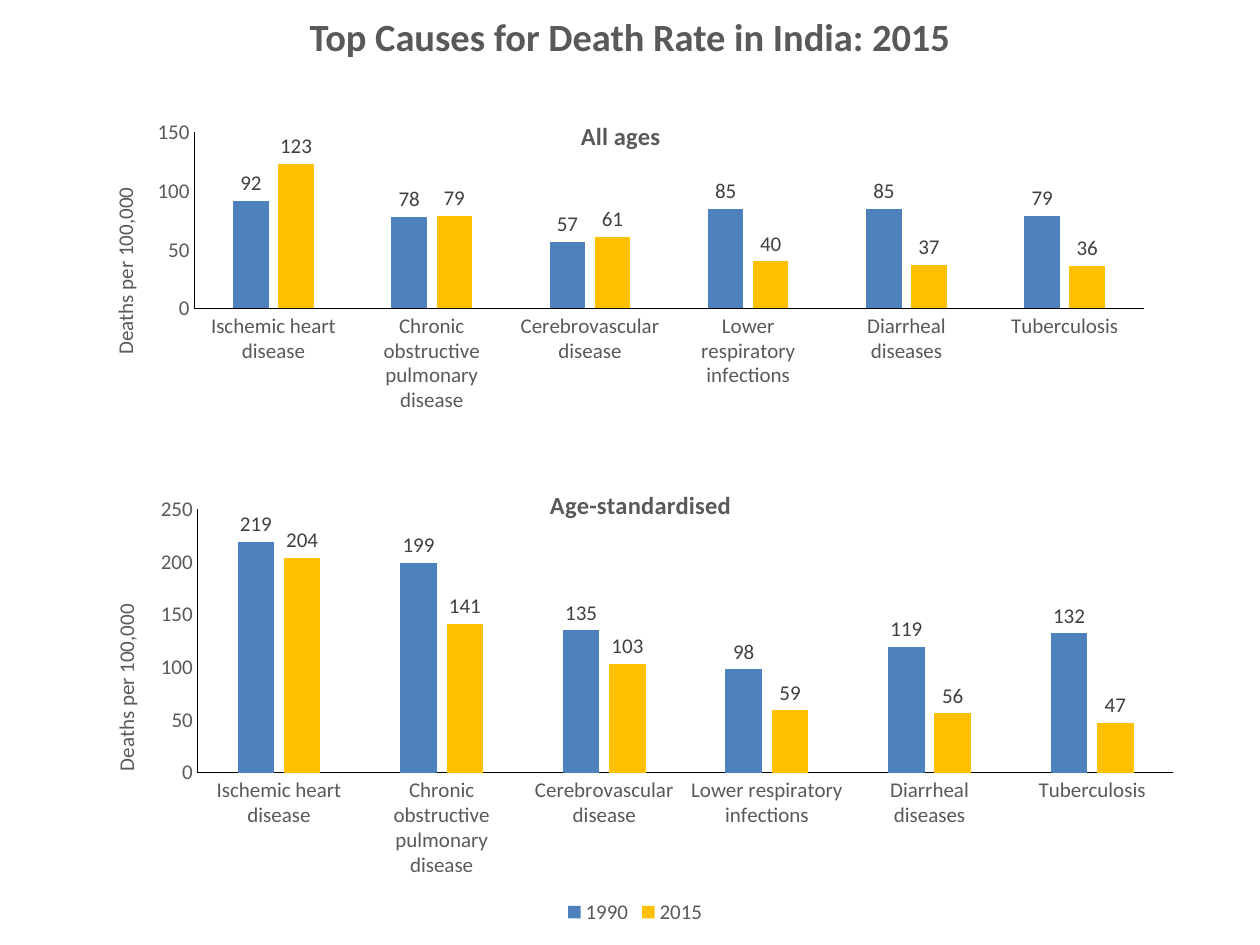
from lxml import etree
from pptx import Presentation
from pptx.chart.data import CategoryChartData
from pptx.dml.color import RGBColor
from pptx.enum.chart import XL_CHART_TYPE, XL_LABEL_POSITION, XL_LEGEND_POSITION, XL_TICK_MARK
from pptx.enum.text import PP_ALIGN
from pptx.oxml.ns import qn
from pptx.util import Cm, Pt

CLUSTERED = XL_CHART_TYPE.COLUMN_CLUSTERED
OUTSIDE_END = XL_LABEL_POSITION.OUTSIDE_END
LEGEND_BOTTOM = XL_LEGEND_POSITION.BOTTOM
NO_TICK = XL_TICK_MARK.NONE
CENTER = PP_ALIGN.CENTER

FONT = "Calibri"
GREY, DARK_GREY, BLACK = "595959", "404040", "000000"
BLUE, GOLD = "4F81BD", "FFC000"
CAUSES = [
    "Ischemic heart disease",
    "Chronic obstructive pulmonary disease",
    "Cerebrovascular disease",
    "Lower respiratory infections",
    "Diarrheal diseases",
    "Tuberculosis",
]


def color(value):
    """Turn a hex string into a colour."""
    return RGBColor.from_string(value)


def style_font(font, size, fill, bold=False):
    """Set the typeface, size, colour and weight of a font."""
    font.name = FONT
    font.size = Pt(size)
    font.bold = bold
    font.color.rgb = color(fill)


def add_heading(slide, text):
    """Add the centred slide heading."""
    heading = slide.shapes.add_textbox(Cm(0), Cm(0.13), Cm(25.4), Cm(1.19))
    heading.text_frame.word_wrap = True
    paragraph = heading.text_frame.paragraphs[0]
    paragraph.alignment = CENTER
    run = paragraph.add_run()
    run.text = text
    style_font(run.font, 22, GREY, True)


def place(parent, index, **fractions):
    """Give a chart part a manual layout in fractions of the chart."""
    for previous in parent.findall(qn("c:layout")):
        parent.remove(previous)
    layout = etree.Element(qn("c:layout"))
    manual = etree.SubElement(layout, qn("c:manualLayout"))
    if "w" in fractions:
        etree.SubElement(manual, qn("c:layoutTarget"), val="inner")
    for mode in ("xMode", "yMode"):
        etree.SubElement(manual, qn(f"c:{mode}"), val="edge")
    for name, fraction in fractions.items():
        etree.SubElement(manual, qn(f"c:{name}"), val=str(fraction))
    parent.insert(index, layout)


def write_title(title, text, size, bold, x, y):
    """Write a chart or axis title and place it."""
    run = title.text_frame.paragraphs[0].add_run()
    run.text = text
    style_font(run.font, size, GREY, bold)
    place(title.element, 1, x=x, y=y)


def style_axis(axis):
    """Give an axis a thin black line, grey labels and no ticks or grid."""
    axis.has_major_gridlines = False
    axis.major_tick_mark = NO_TICK
    axis.minor_tick_mark = NO_TICK
    axis.format.line.color.rgb = color(BLACK)
    axis.format.line.width = Pt(0.75)
    style_font(axis.tick_labels.font, 12, GREY)


def style_series(series, fill):
    """Colour a series and label its columns."""
    series.format.fill.solid()
    series.format.fill.fore_color.rgb = color(fill)
    labels = series.data_labels
    labels.show_value = True
    labels.number_format = "0"
    labels.number_format_is_linked = False
    labels.position = OUTSIDE_END
    style_font(labels.font, 12, DARK_GREY)


def add_death_chart(slide, box, title, title_at, series_values, maximum, plot_at):
    """Add a column chart of death rates by cause and return it."""
    data = CategoryChartData(number_format="0")
    data.categories = CAUSES
    for name, values in series_values.items():
        data.add_series(name, values)
    lengths = [Cm(length) for length in box]
    chart = slide.shapes.add_chart(CLUSTERED, *lengths, data).chart
    style_font(chart.font, 12, BLACK)
    chart.has_legend = False
    chart.has_title = True
    write_title(chart.chart_title, title, 14, True, *title_at)

    style_axis(chart.category_axis)
    rates = chart.value_axis
    style_axis(rates)
    rates.minimum_scale = 0
    rates.maximum_scale = maximum
    rates.major_unit = 50
    rates.tick_labels.number_format = "0"
    rates.tick_labels.number_format_is_linked = False
    rates.has_title = True
    write_title(rates.axis_title, "Deaths per 100,000", 12, False, 0.03, 0.35)

    columns = chart.plots[0]
    columns.gap_width = 219
    columns.overlap = -27
    columns.vary_by_categories = False
    for series, fill in zip(columns.series, (BLUE, GOLD)):
        style_series(series, fill)
    plot_area = chart.element.find(".//" + qn("c:plotArea"))
    place(plot_area, 0, **dict(zip("xywh", plot_at)))
    return chart


def add_legend(chart):
    """Show the years below the chart."""
    chart.has_legend = True
    chart.legend.position = LEGEND_BOTTOM
    chart.legend.include_in_layout = False
    style_font(chart.legend.font, 12, GREY)


def main():
    """Build the slide and save it."""
    presentation = Presentation()
    presentation.slide_width = Cm(25.4)
    presentation.slide_height = Cm(19.05)
    slide = presentation.slides.add_slide(presentation.slide_layouts[6])
    add_heading(slide, "Top Causes for Death Rate in India: 2015")
    add_death_chart(
        slide, (1.5, 1.12, 22, 7.39), "All ages", (0.46, 0.16),
        {"Series 1": (92, 78, 57, 85, 85, 79), "Series 2": (123, 79, 61, 40, 37, 36)},
        150, (0.11, 0.21, 0.87, 0.48),
    )
    standardised = add_death_chart(
        slide, (1.5, 8.53, 22.61, 10.21), "Age-standardised", (0.42, 0.12),
        {"1990": (219, 199, 135, 98, 119, 132), "2015": (204, 141, 103, 59, 56, 47)},
        250, (0.11, 0.17, 0.87, 0.52),
    )
    add_legend(standardised)
    presentation.save("out.pptx")


if __name__ == "__main__":
    main()
